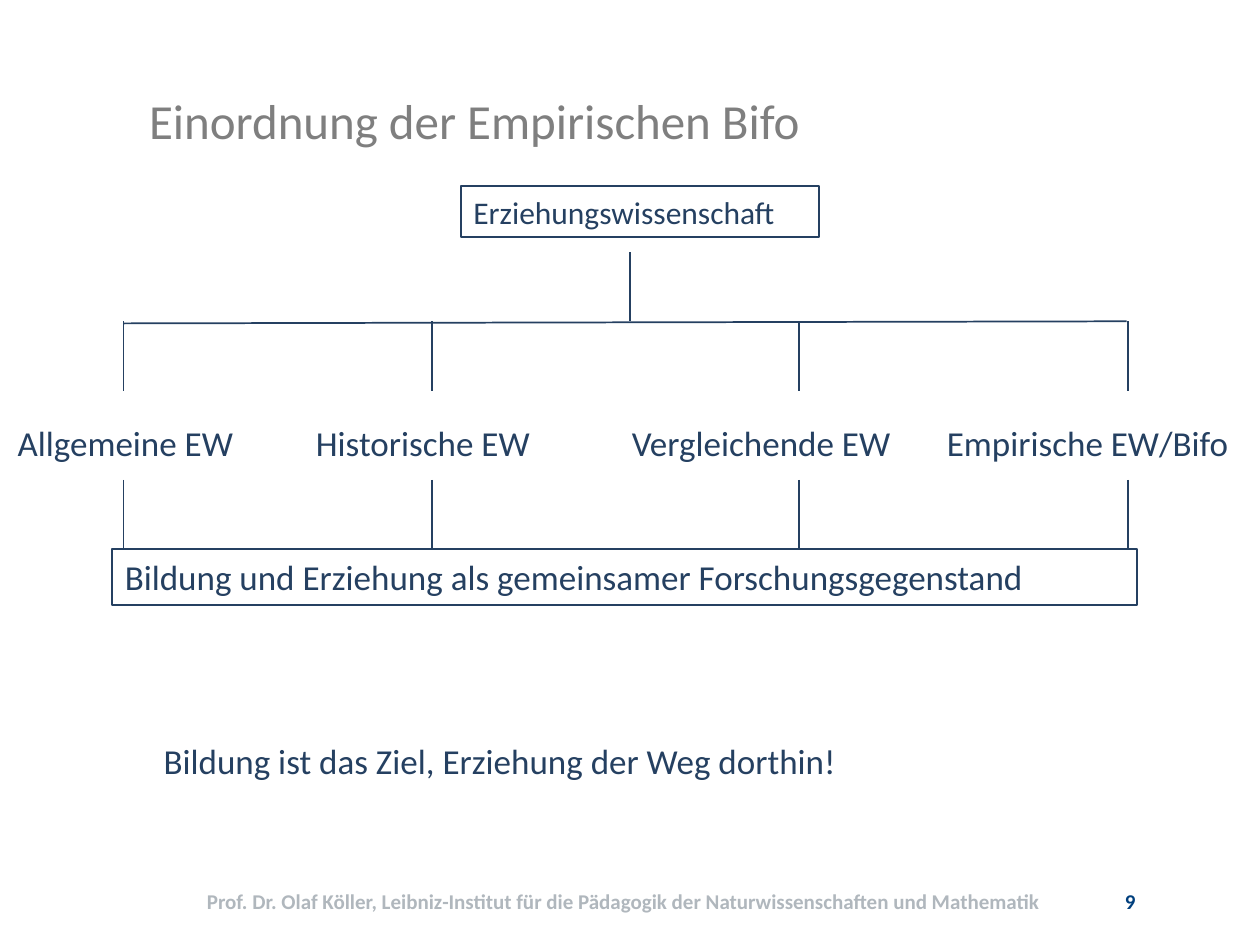
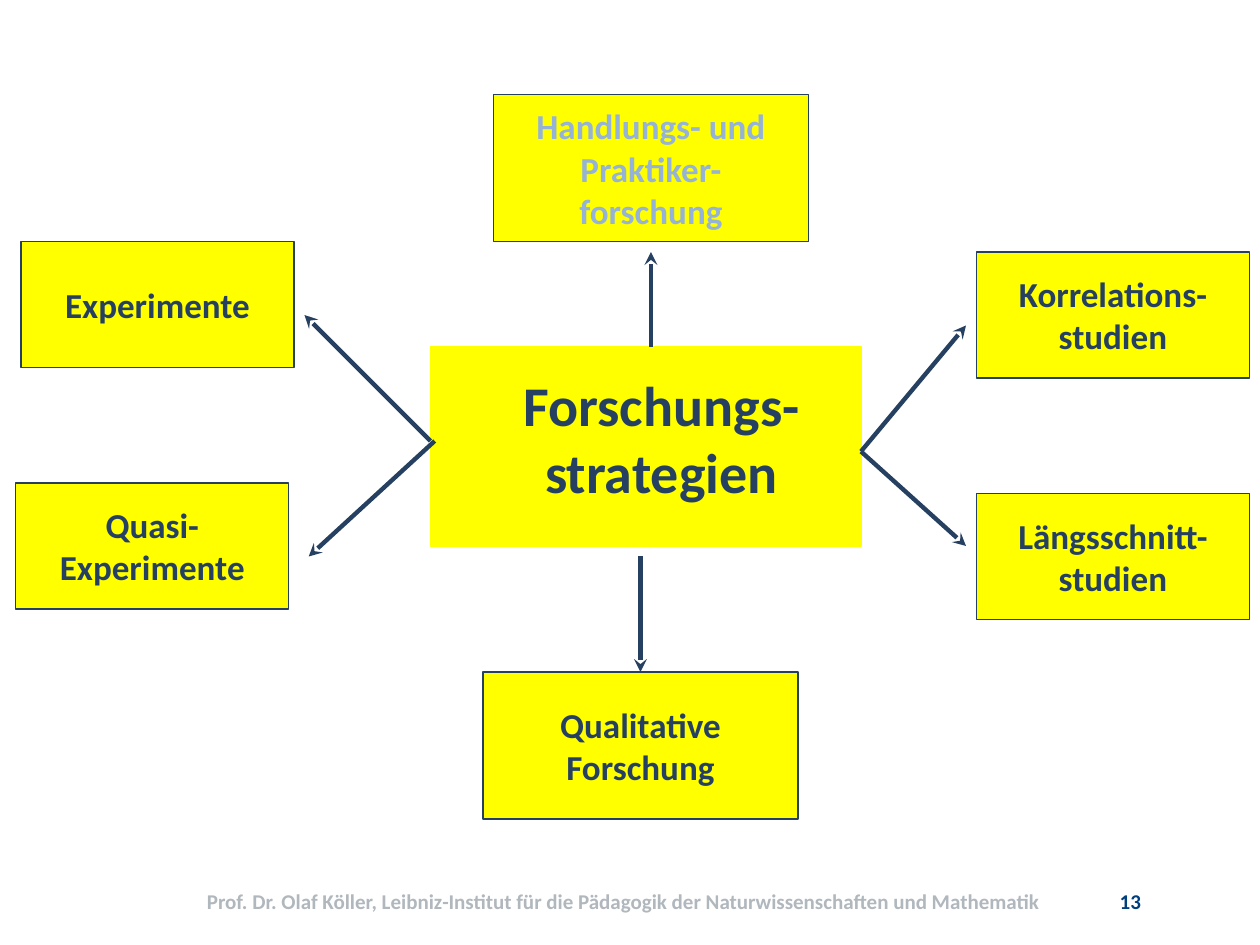
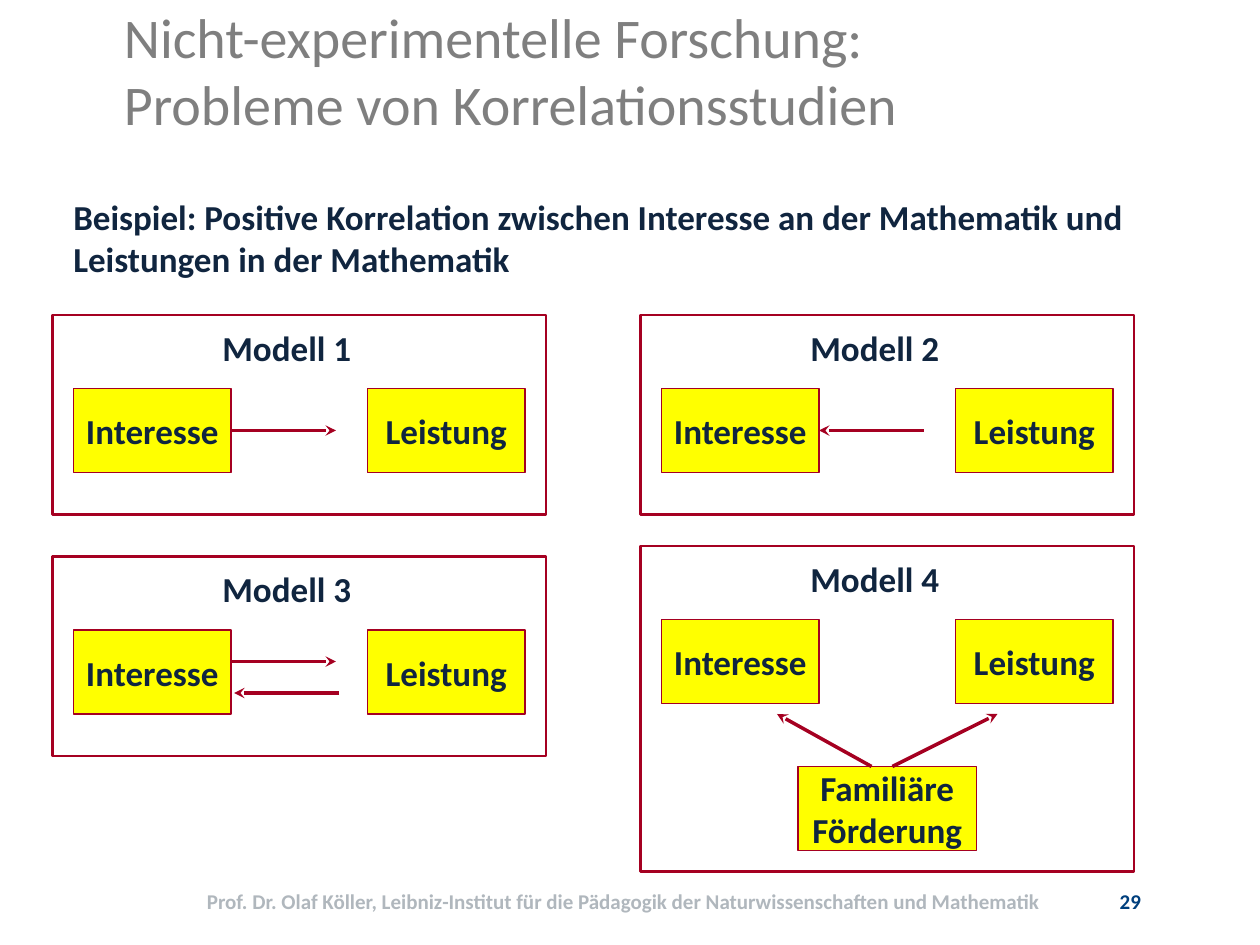
from lxml import etree
from pptx import Presentation
from pptx.dml.color import RGBColor
from pptx.enum.shapes import MSO_CONNECTOR, MSO_SHAPE
from pptx.enum.text import MSO_ANCHOR, MSO_AUTO_SIZE, PP_ALIGN
from pptx.oxml.ns import qn
from pptx.util import Emu, Inches, Pt

# The slide is a grid of 120 columns and 90 rows with square cells.
COLS, ROWS = 120, 90
WIDTH, HEIGHT = Inches(10), Inches(7.5)
CELL = WIDTH / COLS

NAVY = RGBColor(0x25, 0x40, 0x61)
INK = RGBColor(0x10, 0x25, 0x3F)
PALE_BLUE = RGBColor(0x95, 0xB3, 0xD7)
NUMBER_BLUE = RGBColor(0x00, 0x3F, 0x7D)
FOOTER_GREY = RGBColor(0xB0, 0xB7, 0xBD)
TITLE_GREY = RGBColor(0x7F, 0x7F, 0x7F)
YELLOW = RGBColor(0xFF, 0xFF, 0x00)
CRIMSON = RGBColor(0xA5, 0x00, 0x21)

FONT = "Calibri"
LAYOUT_TITLE_ONLY, LAYOUT_BLANK = 5, 6
FOOTER = ("Prof. Dr. Olaf Köller, Leibniz-Institut für die Pädagogik "
          "der Naturwissenschaften und Mathematik")
LEFT, CENTER = PP_ALIGN.LEFT, PP_ALIGN.CENTER
TOP, MIDDLE = MSO_ANCHOR.TOP, MSO_ANCHOR.MIDDLE


def grid(*cells):
    """Turn grid cells into slide lengths."""
    return [Emu(round(c * CELL)) for c in cells]


def write(sp, text, size, color, bold=False, align=LEFT, anchor=TOP, wrap=True):
    tf = sp.text_frame
    tf.text = text
    tf.word_wrap = wrap
    tf.auto_size = MSO_AUTO_SIZE.NONE
    tf.vertical_anchor = anchor
    for p in tf.paragraphs:
        p.alignment = align
        for r in p.runs:
            r.font.name, r.font.size, r.font.bold = FONT, Pt(size), bold
            r.font.color.rgb = color


def add_label(s, box, text, size=20, color=NAVY, **style):
    write(s.shapes.add_textbox(*grid(*box)), text, size, color, **style)


def add_box(s, box, line, width=0.75, fill=None):
    sp = s.shapes.add_shape(MSO_SHAPE.RECTANGLE, *grid(*box))
    sp.shadow.inherit = False
    sp.line.color.rgb, sp.line.width = line, Pt(width)
    if fill is None:
        sp.fill.background()
    else:
        sp.fill.solid()
        sp.fill.fore_color.rgb = fill
    return sp


def add_node(s, box, text, line=NAVY, color=NAVY):
    """Yellow box with bold centred text."""
    sp = add_box(s, box, line, fill=YELLOW)
    write(sp, text, 20, color, bold=True, align=CENTER, anchor=MIDDLE, wrap=False)


def add_line(s, start, end, color=NAVY, width=1.0, arrow=False):
    cxn = s.shapes.add_connector(MSO_CONNECTOR.STRAIGHT, *grid(*start, *end))
    cxn.line.color.rgb, cxn.line.width = color, Pt(width)
    if arrow:
        etree.SubElement(cxn.line._get_or_add_ln(), qn("a:tailEnd"), type="stealth")
    etree.SubElement(cxn._element.spPr, qn("a:effectLst"))


def add_slide(prs, number, title=None, title_box=None, title_size=28, anchor=MIDDLE):
    layout = LAYOUT_TITLE_ONLY if title else LAYOUT_BLANK
    s = prs.slides.add_slide(prs.slide_layouts[layout])
    if title:
        sp = s.shapes.title
        sp.left, sp.top, sp.width, sp.height = grid(*title_box)
        write(sp, title, title_size, TITLE_GREY, anchor=anchor)
    for left, width, text, color in ((13.8, 91.2, FOOTER, FOOTER_GREY),
                                     (104.9, 5.5, str(number), NUMBER_BLUE)):
        add_label(s, (left, 83.4, width, 4.8), text, 12, color,
                  bold=True, align=CENTER, anchor=MIDDLE)
    return s


def build_discipline_tree(prs):
    s = add_slide(prs, 9, "Einordnung der Empirischen Bifo", (13, 8, 107, 6.8),
                  anchor=TOP)
    root = add_box(s, (43.9, 17.75, 34.1, 4.8), NAVY, 1)
    write(root, "Erziehungswissenschaft", 18, NAVY)

    rail, base = 30.6, 52.3
    add_line(s, (60, 24), (60, rail))
    add_line(s, (11.75, rail + 0.2), (107.3, rail))
    branches = ((11.75, 0.5, 25.7, "Allgemeine EW"),
                (41.15, 28.9, 25.3, "Historische EW"),
                (76.1, 59, 30.1, "Vergleichende EW"),
                (107.4, 89, 32.3, "Empirische EW/Bifo"))
    for x, left, width, text in branches:
        add_line(s, (x, rail), (x, rail + 6.6))
        add_label(s, (left, 39.6, width, 5.3), text)
        add_line(s, (x, base - 6.6), (x, base))

    shared = add_box(s, (10.7, base, 97.6, 5.3), NAVY, 1.25)
    write(shared, "Bildung und Erziehung als gemeinsamer Forschungsgegenstand", 20, NAVY)
    add_label(s, (14.4, 69.8, 74.6, 5.3),
              "Bildung ist das Ziel, Erziehung der Weg dorthin!")


def build_strategy_map(prs):
    s = add_slide(prs, 13)
    add_box(s, (41, 33, 41, 19), YELLOW, fill=YELLOW)
    add_label(s, (10, 34.7, 106, 14.2), "Forschungs-\nstrategien", 32,
              bold=True, align=CENTER)

    side, middle = (26, 12), (30, 14)
    strategies = (
        ("Quasi-\nExperimente", (1.5, 46), side, (41.4, 42), (29.4, 53), NAVY),
        ("Experimente", (2, 23), side, (41, 42), (29, 30), NAVY),
        ("Korrelations-\nstudien", (93, 24), side, (82, 43), (92, 31), NAVY),
        ("Längsschnitt-\nstudien", (93, 47), side, (82, 43), (92, 52), NAVY),
        ("Handlungs- und\nPraktiker-\nforschung", (47, 9), middle,
         (62, 33), (62, 24), PALE_BLUE),
        ("Qualitative\nForschung", (46, 64), middle, (61, 53), (61, 64), NAVY),
    )
    for text, corner, size, start, end, color in strategies:
        add_node(s, corner + size, text, color=color)
        add_line(s, start, end, width=2.5, arrow=True)


def add_model(s, box, name, arrows, cause=None):
    """Framed causal model; the arrows run relative to the frame's corner."""
    left, top = box[:2]
    add_box(s, box, CRIMSON, 1.5)
    add_label(s, (left + 15, top + 0.5, 16.6, 5.3), name, color=INK, bold=True)
    nodes = [("Interesse", 2, 7, 15), ("Leistung", 30, 7, 15)]
    if cause:
        nodes.append((cause, 15, 21, 17))
    for text, x, y, width in nodes:
        add_node(s, (left + x, top + y, width, 8), text, CRIMSON, INK)
    for x1, y1, x2, y2 in arrows:
        add_line(s, (left + x1, top + y1), (left + x2, top + y2), CRIMSON, 2, arrow=True)


def build_correlation_models(prs):
    s = add_slide(prs, 29,
                  "Nicht-experimentelle Forschung:\vProbleme von Korrelationsstudien",
                  (10.6, 3.1, 90.1, 7), 32)
    add_label(s, (5.8, 18, 106.2, 9.2),
              "Beispiel: Positive Korrelation zwischen Interesse an der Mathematik "
              "und Leistungen in der Mathematik", color=INK, bold=True)
    add_model(s, (5, 30, 47, 19), "Modell 1", [(17, 11, 27, 11)])
    add_model(s, (61, 30, 47, 19), "Modell 2", [(27, 11, 17, 11)])
    add_model(s, (5, 53, 47, 19), "Modell 3",
              [(17, 10, 27, 10), (27.3, 13, 17.3, 13)])
    add_model(s, (61, 52, 47, 31), "Modell 4",
              [(22, 21, 13, 16), (24, 21, 34, 16)], "Familiäre\nFörderung")


def main():
    prs = Presentation()
    prs.slide_width, prs.slide_height = WIDTH, HEIGHT
    build_discipline_tree(prs)
    build_strategy_map(prs)
    build_correlation_models(prs)
    prs.save("out.pptx")


if __name__ == "__main__":
    main()
